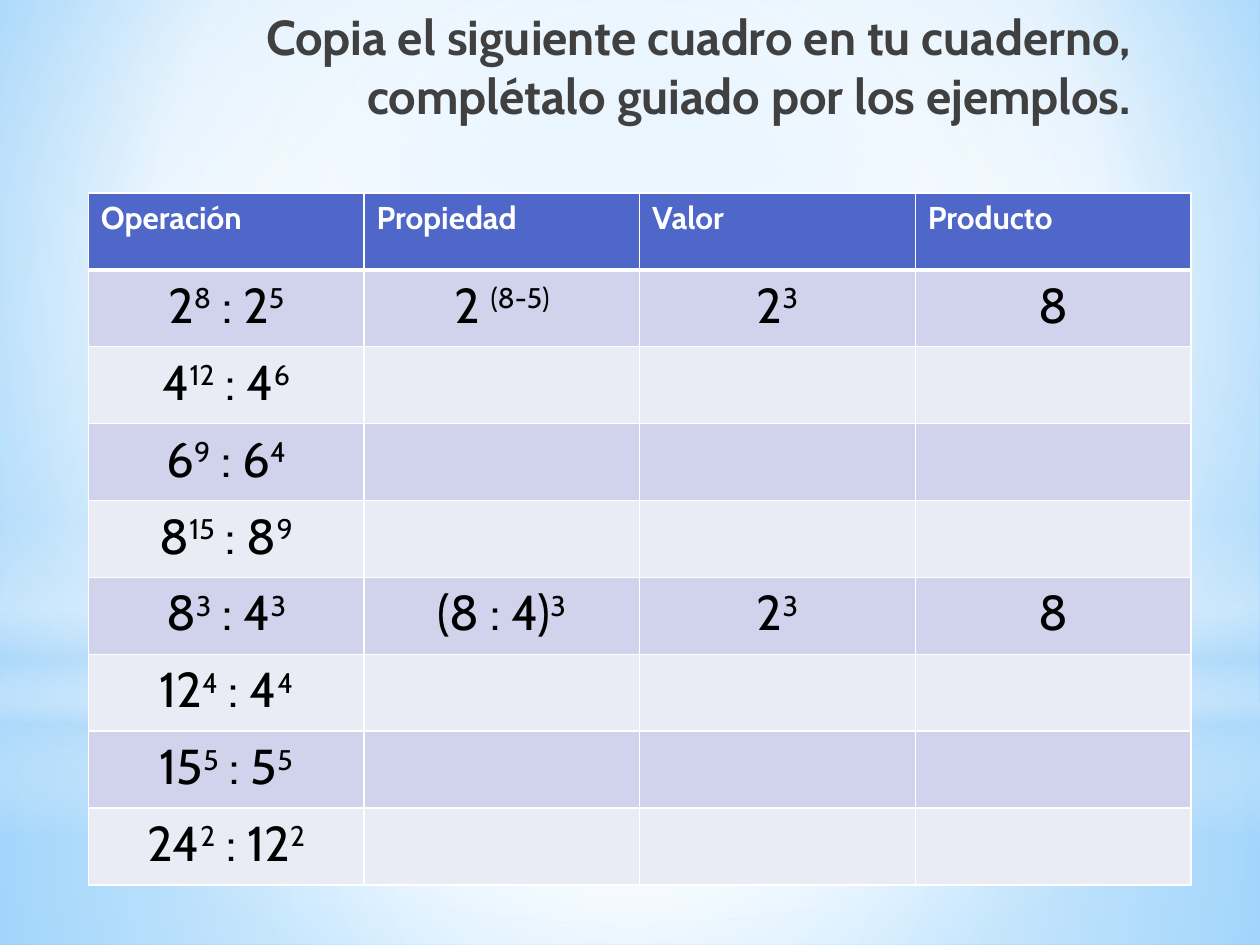
from pptx import Presentation
from pptx.dml.color import RGBColor
from pptx.enum.shapes import MSO_SHAPE
from pptx.enum.text import MSO_ANCHOR, MSO_AUTO_SIZE, PP_ALIGN
from pptx.oxml import parse_xml
from pptx.oxml.ns import nsdecls
from pptx.util import Cm, Pt

FONT = "Cabin"
COLORS = {
    "title": "404040", "header": "4E67C8", "odd": "D0D3EB", "even": "E9EBF5",
    "white": "FFFFFF", "black": "000000", "haze": "B4DCFA",
    "sky": "9ED5FF", "deep": "5BB9FF",
}
CENTER = (50, 50, 50, 50)

# Exponents stand between bars.
HEADINGS = ["Operación", "Propiedad", "Valor", "Producto"]
EXERCISES = [
    ["2|8| : 2|5", "2 |(8-5)", "2|3", "8"],
    ["4|12| : 4|6"],
    ["6|9| : 6|4"],
    ["8|15| : 8|9"],
    ["8|3| : 4|3", "(8 : 4)|3", "2|3", "8"],
    ["12|4| : 4|4"],
    ["15|5| : 5|5"],
    ["24|2| : 12|2"],
]


def rgb(name):
    return RGBColor.from_string(COLORS[name])


def gradient(stops, focus=None):
    """Gradient of (position, color, opacity): circular with a focus, else downward."""
    marks = "".join(
        f'<a:gs pos="{pos * 1000}"><a:srgbClr val="{COLORS[color]}">'
        f'<a:alpha val="{opacity * 1000}"/></a:srgbClr></a:gs>'
        for pos, color, opacity in stops)
    if focus:
        left, top, right, bottom = (side * 1000 for side in focus)
        course = (f'<a:path path="circle"><a:fillToRect l="{left}" t="{top}" '
                  f'r="{right}" b="{bottom}"/></a:path>')
    else:
        course = '<a:lin ang="5400000" scaled="0"/>'
    return parse_xml(f'<a:gradFill {nsdecls("a")} rotWithShape="1">'
                     f'<a:gsLst>{marks}</a:gsLst>{course}</a:gradFill>')


def swap_fill(properties, fill):
    solid = properties.xpath("./a:solidFill")[0]
    properties.replace(solid, fill)


def add_glow(slide, kind, top, height, fill):
    glow = slide.shapes.add_shape(kind, 0, top, Cm(25.4), height)
    glow.shadow.inherit = False
    glow.line.fill.background()
    glow.fill.solid()
    swap_fill(glow._element.spPr, fill)


def paint_sky(slide, height):
    slide.background.fill.solid()
    swap_fill(slide.element.xpath(".//p:bgPr")[0], gradient(
        [(0, "sky", 100), (60, "white", 100), (100, "deep", 100)], (20, 10, 20, 60)))
    horizon = Cm(14.17)
    add_glow(slide, MSO_SHAPE.RECTANGLE, horizon, height - horizon, gradient(
        [(0, "white", 91), (37, "white", 76), (100, "haze", 79)], CENTER))
    add_glow(slide, MSO_SHAPE.RECTANGLE, 0, horizon, gradient(
        [(0, "white", 89), (48, "white", 62), (100, "haze", 79)], CENTER))
    add_glow(slide, MSO_SHAPE.RECTANGLE, Cm(10.46), Cm(6.35), gradient(
        [(0, "white", 0), (29, "white", 30), (45, "haze", 40),
         (55, "white", 26), (65, "haze", 60), (100, "white", 0)]))
    add_glow(slide, MSO_SHAPE.OVAL, Cm(4.45), horizon, gradient(
        [(0, "white", 100), (56, "white", 0)], CENTER))


def format_run(run, size, color, bold=False):
    run.font.name = FONT
    run.font.size = Pt(size)
    run.font.bold = bold
    run.font.color.rgb = rgb(color)


def place_title(slide, left, top, width, height):
    title = slide.shapes.title
    title.left, title.top, title.width, title.height = left, top, width, height
    slide.shapes._spTree.append(title._element)  # in front of the sky
    frame = title.text_frame
    frame.text = "Copia el siguiente cuadro en tu cuaderno, complétalo guiado por los ejemplos."
    frame.word_wrap = True
    frame.auto_size = MSO_AUTO_SIZE.NONE
    frame.vertical_anchor = MSO_ANCHOR.TOP
    paragraph = frame.paragraphs[0]
    paragraph.alignment = PP_ALIGN.RIGHT
    indent = Cm(0.89)
    properties = paragraph._p.get_or_add_pPr()
    properties.set("marL", str(indent))
    properties.set("indent", str(-indent))
    format_run(paragraph.runs[0], 28, "title", bold=True)


def style_cell(cell, fill, top=1, bottom=1):
    """Fill the cell and draw its white borders, widths in points."""
    cell.fill.solid()
    cell.fill.fore_color.rgb = rgb(fill)
    borders = {"lnL": 1, "lnR": 1, "lnT": top, "lnB": bottom}
    for position, (side, width) in enumerate(borders.items()):
        cell._tc.get_or_add_tcPr().insert(position, parse_xml(
            f'<a:{side} {nsdecls("a")} w="{Pt(width)}"><a:solidFill>'
            f'<a:srgbClr val="{COLORS["white"]}"/></a:solidFill></a:{side}>'))


def write_power(cell, expression):
    paragraph = cell.text_frame.paragraphs[0]
    paragraph.alignment = PP_ALIGN.CENTER
    for index, part in enumerate(expression.split("|")):
        run = paragraph.add_run()
        run.text = part
        format_run(run, 28, "black")
        if index % 2:
            run.font._element.set("baseline", "30000")


def add_exercises(slide, left, top, width, height):
    rows, columns = len(EXERCISES) + 1, len(HEADINGS)
    table = slide.shapes.add_table(rows, columns, left, top, width, height).table
    for column, heading in enumerate(HEADINGS):
        cell = table.cell(0, column)
        style_cell(cell, "header", bottom=3)
        cell.text_frame.text = heading
        format_run(cell.text_frame.paragraphs[0].runs[0], 18, "white", bold=True)
    for row, expressions in enumerate(EXERCISES, start=1):
        for column in range(columns):
            style_cell(table.cell(row, column), "odd" if row % 2 else "even",
                       top=3 if row == 1 else 1)
        for column, expression in enumerate(expressions):
            write_power(table.cell(row, column), expression)


def main():
    deck = Presentation()
    deck.slide_width, deck.slide_height = Cm(25.4), Cm(19.05)
    slide = deck.slides.add_slide(deck.slide_layouts[5])
    paint_sky(slide, deck.slide_height)
    place_title(slide, Cm(2.6), 0, Cm(20.45), Cm(3.18))
    add_exercises(slide, Cm(1.78), Cm(3.89), Cm(22.23), Cm(13.95))
    deck.save("out.pptx")


if __name__ == "__main__":
    main()
